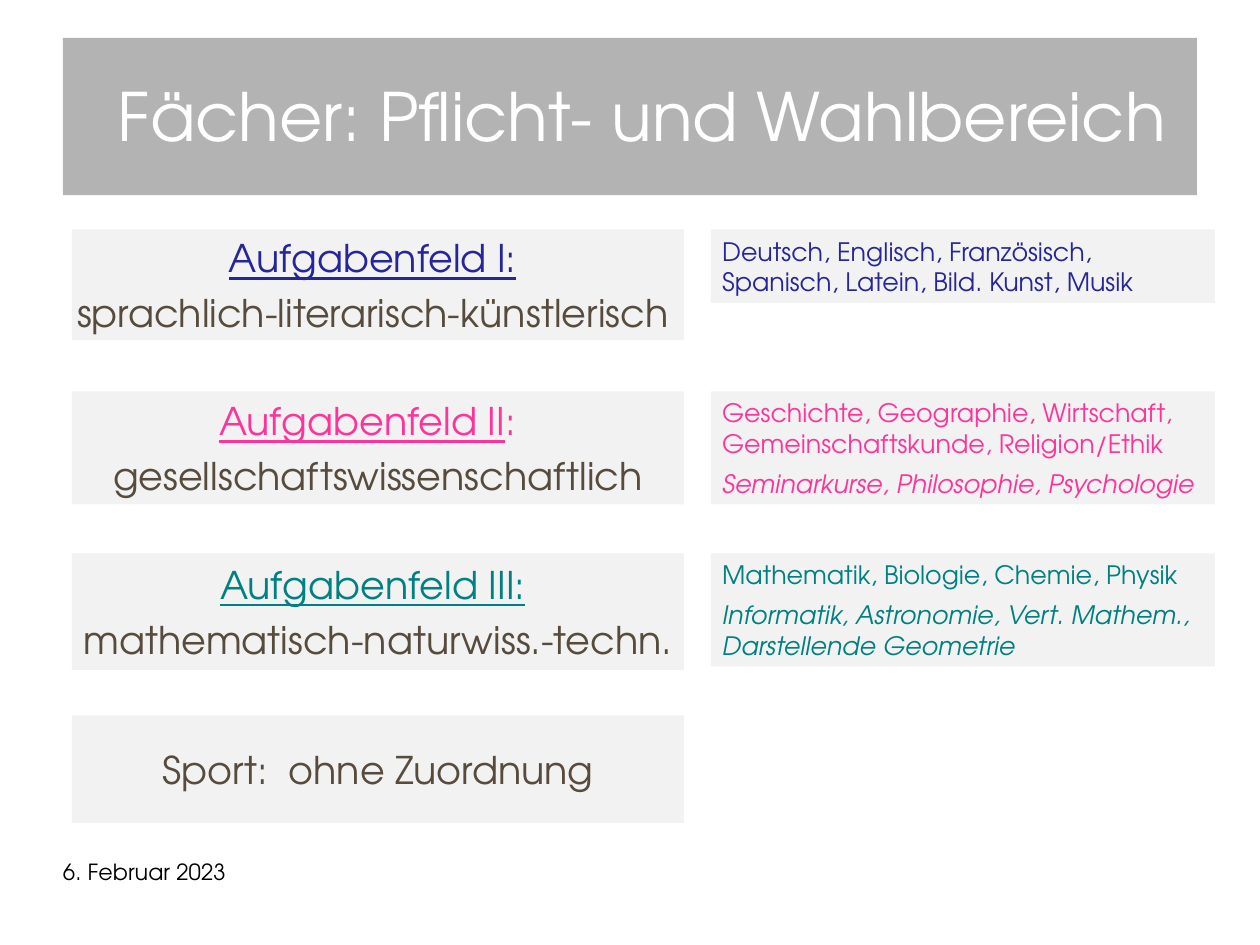
from pptx import Presentation
from pptx.dml.color import RGBColor
from pptx.enum.shapes import MSO_SHAPE
from pptx.enum.text import MSO_ANCHOR, MSO_AUTO_SIZE, PP_ALIGN
from pptx.util import Cm, Pt

RECTANGLE = MSO_SHAPE.RECTANGLE
TOP, MIDDLE = MSO_ANCHOR.TOP, MSO_ANCHOR.MIDDLE
LEFT, CENTER = PP_ALIGN.LEFT, PP_ALIGN.CENTER
FIT, FIXED = MSO_AUTO_SIZE.SHAPE_TO_FIT_TEXT, MSO_AUTO_SIZE.NONE

FONT = "TeX Gyre Adventor"
COLORS = {
    "banner": "B3B3B3", "panel": "F2F2F2", "white": "FFFFFF", "black": "000000",
    "brown": "564B3C", "blue": "262699", "pink": "FF3399", "teal": "008080",
}

TITLE = "Fächer: Pflicht- und Wahlbereich"
DATE = "6. Februar 2023"
SPORT = "Sport:  ohne Zuordnung"
FIELDS = [
    {"color": "blue", "heading": "Aufgabenfeld I:", "tail": " ",
     "area": "sprachlich-literarisch-künstlerisch ", "height": 2.46,
     "subjects": [("Deutsch, Englisch, Französisch,", False),
                  ("Spanisch, Latein, Bild. Kunst, Musik", False)],
     "subject_height": 1.63, "subject_gap": 0},
    {"color": "pink", "heading": "Aufgabenfeld II", "tail": ":  ",
     "area": "gesellschaftswissenschaftlich", "height": 2.51,
     "subjects": [("Geschichte, Geographie, Wirtschaft, "
                   "Gemeinschaftskunde, Religion/Ethik", False),
                  ("Seminarkurse, Philosophie, Psychologie", True)],
     "subject_height": 2.51, "subject_gap": 6},
    {"color": "teal", "heading": "Aufgabenfeld III:", "tail": " ",
     "area": "mathematisch-naturwiss.-techn.", "height": 2.59,
     "subjects": [("Mathematik, Biologie, Chemie, Physik", False),
                  ("Informatik, Astronomie, Vert. Mathem., "
                   "Darstellende Geometrie", True)],
     "subject_height": 2.51, "subject_gap": 6},
]

MARGIN = 1.4
FIELD_LEFT, FIELD_WIDTH = 1.6, 13.6
SUBJECT_LEFT, SUBJECT_WIDTH = 15.8, 11.2
FIRST_ROW, ROW_STEP = 5.1, 3.6
SPORT_HEIGHT = 2.39
PANEL_INSETS = (0.25, 0.13, 0.25, 0.13)


def set_frame(box, insets, **settings):
    frame = box.text_frame
    sides = ("margin_left", "margin_top", "margin_right", "margin_bottom")
    for side, inset in zip(sides, insets):
        setattr(frame, side, Cm(inset))
    for name, value in settings.items():
        setattr(frame, name, value)


def add_panel(page, place, fill, insets=PANEL_INSETS, wrap=True, fit=FIXED):
    box = page.shapes.add_shape(RECTANGLE, *map(Cm, place))
    box.shadow.inherit = False
    box.fill.solid()
    box.fill.fore_color.rgb = RGBColor.from_string(COLORS[fill])
    box.line.fill.background()
    set_frame(box, insets, auto_size=fit, word_wrap=wrap, vertical_anchor=MIDDLE)
    return box


def write(box, paragraphs, size, align=LEFT, gap=0, spacing=1.0):
    frame = box.text_frame
    for index, spans in enumerate(paragraphs):
        para = frame.add_paragraph() if index else frame.paragraphs[0]
        layout = {"alignment": align, "space_after": Pt(gap), "line_spacing": spacing}
        for name, value in layout.items():
            setattr(para, name, value)
        for text, color, style in spans:
            span = para.add_run()
            span.text = text
            span.font.color.rgb = RGBColor.from_string(COLORS[color])
            for name, value in {"name": FONT, "size": Pt(size), **style}.items():
                setattr(span.font, name, value)


def main():
    deck = Presentation()
    deck.slide_width, deck.slide_height = Cm(28), Cm(21)
    page = deck.slides.add_slide(deck.slide_layouts[6])

    banner = add_panel(page, (MARGIN, 0.84, 25.2, 3.5), "banner", (1.22, 0.1, 0.5, 0))
    write(banner, [[(TITLE, "white", {})]], 42, spacing=0.93)

    for row, field in enumerate(FIELDS):
        top, color = FIRST_ROW + row * ROW_STEP, field["color"]
        place = (FIELD_LEFT, top, FIELD_WIDTH, field["height"])
        box = add_panel(page, place, "panel", wrap=False)
        heading = [(field["heading"], color, {"underline": True}),
                   (field["tail"], color, {"underline": False})]
        write(box, [heading, [(field["area"], "brown", {})]], 24, CENTER, gap=6)

        place = (SUBJECT_LEFT, top, SUBJECT_WIDTH, field["subject_height"])
        box = add_panel(page, place, "panel", fit=FIT)
        subjects = [[(text, color, {"italic": italic})]
                    for text, italic in field["subjects"]]
        write(box, subjects, 16, gap=field["subject_gap"])

    top = FIRST_ROW + len(FIELDS) * ROW_STEP
    place = (FIELD_LEFT, top, FIELD_WIDTH, SPORT_HEIGHT)
    box = add_panel(page, place, "panel", wrap=False)
    write(box, [[(SPORT, "brown", {})]], 24, CENTER)

    box = page.shapes.add_textbox(Cm(MARGIN), Cm(19.13), Cm(6.53), Cm(1.45))
    set_frame(box, (0, 0, 0, 0), word_wrap=True, vertical_anchor=TOP)
    write(box, [[(DATE, "black", {})]], 14, spacing=0.93)

    deck.save("out.pptx")


if __name__ == "__main__":
    main()
